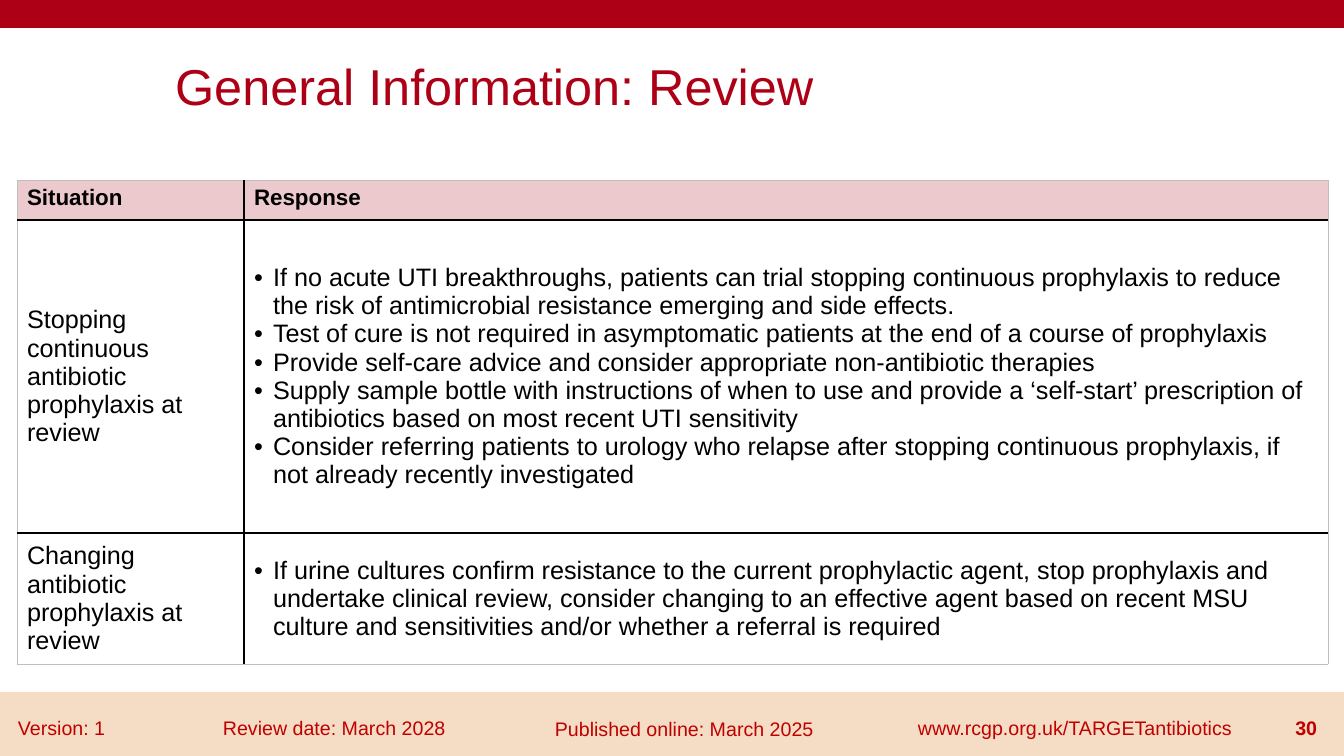
from dataclasses import dataclass

from lxml import etree
from pptx import Presentation
from pptx.dml.color import RGBColor
from pptx.enum.shapes import MSO_SHAPE as Shape
from pptx.enum.text import MSO_ANCHOR as Anchor, MSO_AUTO_SIZE as AutoSize, PP_ALIGN as Align
from pptx.oxml.ns import qn
from pptx.util import Emu, Pt

SLIDE_W, SLIDE_H = 1344, 756
EMU_PER_PX = 914400 / 100.8
BULLET_INDENT = 19
COLORS = {
    "crimson": "AD0016", "red": "C00000", "sand": "F4DDC4", "pink": "ECC9CD",
    "white": "FFFFFF", "black": "000000", "grey": "BFBFBF",
}


@dataclass(frozen=True)
class Bar:
    y: int
    h: int
    color: str


@dataclass(frozen=True)
class FooterItem:
    text: str
    x: int
    y: int
    w: int
    bold: bool = False
    align: Align = Align.LEFT


@dataclass(frozen=True)
class Row:
    height: int
    situation: str
    responses: tuple[str, ...]
    header: bool = False


BARS = [Bar(693, 63, "sand"), Bar(-1, 28, "crimson")]
FOOTER = [
    FooterItem("www.rcgp.org.uk/TARGETantibiotics", 908, 711, 368),
    FooterItem("30", 1268, 711, 59, True, Align.RIGHT),
    FooterItem("Version: 1", 8, 711, 117),
    FooterItem("Review date: March 2028", 213, 711, 280),
    FooterItem("Published online: March 2025", 545, 712, 294),
]
COL_WIDTHS = [227, 1084]
ROWS = [
    Row(40, "Situation", ("Response",), header=True),
    Row(313, "Stopping continuous antibiotic prophylaxis at review", (
        "If no acute UTI breakthroughs, patients can trial stopping continuous prophylaxis "
        "to reduce the risk of antimicrobial resistance emerging and side effects.",
        "Test of cure is not required in asymptomatic patients at the end of a course of prophylaxis",
        "Provide self-care advice and consider appropriate non-antibiotic therapies",
        "Supply sample bottle with instructions of when to use and provide a ‘self-start’ "
        "prescription of antibiotics based on most recent UTI sensitivity",
        "Consider referring patients to urology who relapse after stopping continuous "
        "prophylaxis, if not already recently investigated",
    )),
    Row(123, "Changing antibiotic prophylaxis at review", (
        "If urine cultures confirm resistance to the current prophylactic agent, stop "
        "prophylaxis and undertake clinical review, consider changing to an effective agent "
        "based on recent MSU culture and sensitivities and/or whether a referral is required",
    )),
]


def px(n: int) -> Emu:
    return Emu(round(n * EMU_PER_PX))


def rgb(name: str) -> RGBColor:
    return RGBColor.from_string(COLORS[name])


def write(p, text: str, size: int, color: str, bold: bool = False) -> None:
    r = p.add_run()
    r.text = text
    for name, value in {"name": "Arial", "size": Pt(size), "bold": bold}.items():
        setattr(r.font, name, value)
    r.font.color.rgb = rgb(color)


def add_bar(s, bar: Bar) -> None:
    sp = s.shapes.add_shape(Shape.RECTANGLE, 0, px(bar.y), px(SLIDE_W), px(bar.h))
    sp.shadow.inherit = False
    sp.fill.solid()
    sp.fill.fore_color.rgb = rgb(bar.color)
    sp.line.color.rgb = rgb(bar.color)
    sp.line.width = Pt(1)


def add_footer_item(s, item: FooterItem) -> None:
    tf = s.shapes.add_textbox(px(item.x), px(item.y), px(item.w), px(40)).text_frame
    tf.word_wrap = True
    p = tf.paragraphs[0]
    p.alignment = item.align
    write(p, item.text, 14, "red", item.bold)


def add_title(s, text: str) -> None:
    sp = s.shapes.title
    box = {"left": 165, "top": 26, "width": 1070, "height": 127}
    for name, value in box.items():
        setattr(sp, name, px(value))
    tf = sp.text_frame
    frame = {"vertical_anchor": Anchor.MIDDLE, "auto_size": AutoSize.NONE, "word_wrap": True}
    for name, value in frame.items():
        setattr(tf, name, value)
    p = tf.paragraphs[0]
    p.alignment = Align.LEFT
    p.line_spacing = 0.9
    write(p, text, 36, "crimson")


def add_bullet(p) -> None:
    pPr = p._p.get_or_add_pPr()
    pPr.set("marL", str(px(BULLET_INDENT)))
    pPr.set("indent", str(-px(BULLET_INDENT)))
    etree.SubElement(pPr, qn("a:buFont")).set("typeface", "Arial")
    etree.SubElement(pPr, qn("a:buChar")).set("char", "•")


def set_borders(cell, row: int, col: int) -> None:
    outer = {
        "a:lnL": col == 0, "a:lnR": col == len(COL_WIDTHS) - 1,
        "a:lnT": row == 0, "a:lnB": row == len(ROWS) - 1,
    }
    tcPr = cell._tc.get_or_add_tcPr()
    for tag, is_outer in outer.items():
        ln = etree.SubElement(tcPr, qn(tag), w=str(Pt(0.5 if is_outer else 1)))
        fill = etree.SubElement(ln, qn("a:solidFill"))
        color = COLORS["grey" if is_outer else "black"]
        etree.SubElement(fill, qn("a:srgbClr"), val=color)


def fill_cell(cell, row: Row, texts: tuple[str, ...], bulleted: bool) -> None:
    cell.fill.solid()
    cell.fill.fore_color.rgb = rgb("pink" if row.header else "white")
    cell.vertical_anchor = Anchor.TOP if row.header else Anchor.MIDDLE
    tf = cell.text_frame
    for i, text in enumerate(texts):
        p = tf.add_paragraph() if i else tf.paragraphs[0]
        if bulleted:
            add_bullet(p)
        write(p, text, 16 if row.header else 18, "black", row.header)


def add_review_table(s) -> None:
    height = sum(row.height for row in ROWS)
    table = s.shapes.add_table(len(ROWS), len(COL_WIDTHS), px(17), px(180),
                               px(sum(COL_WIDTHS)), px(height)).table
    table.horz_banding = False
    for column, width in zip(table.columns, COL_WIDTHS):
        column.width = px(width)
    for i, row in enumerate(ROWS):
        table.rows[i].height = px(row.height)
        for j, texts in enumerate([(row.situation,), row.responses]):
            cell = table.cell(i, j)
            set_borders(cell, i, j)
            fill_cell(cell, row, texts, bulleted=j == 1 and not row.header)


def main() -> None:
    prs = Presentation()
    prs.slide_width, prs.slide_height = px(SLIDE_W), px(SLIDE_H)
    s = prs.slides.add_slide(prs.slide_layouts.get_by_name("Title Only"))

    # Bands and footer
    for bar in BARS:
        add_bar(s, bar)
    for item in FOOTER:
        add_footer_item(s, item)

    # Title and table
    add_title(s, "General Information: Review")
    add_review_table(s)

    prs.save("out.pptx")


if __name__ == "__main__":
    main()
